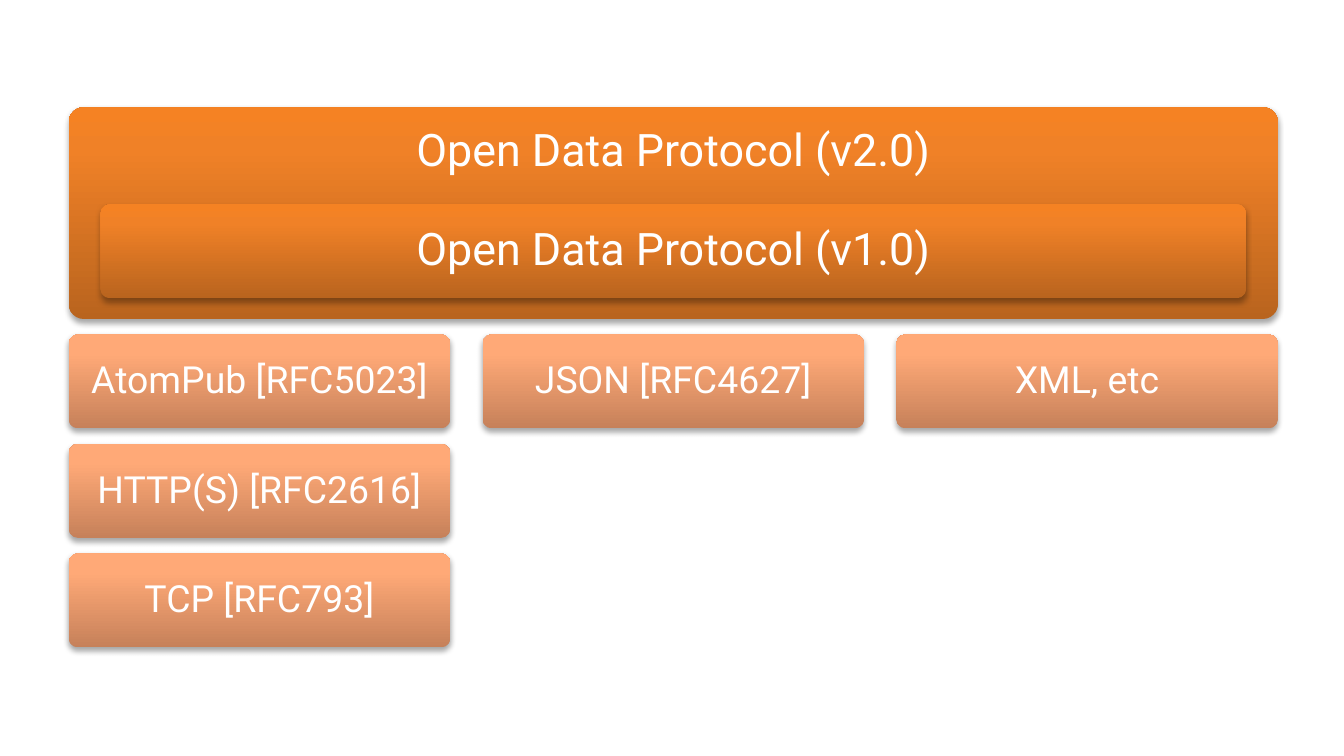
from pptx import Presentation
from pptx.dml.color import RGBColor
from pptx.enum.shapes import MSO_SHAPE
from pptx.enum.text import MSO_ANCHOR, PP_ALIGN
from pptx.oxml import parse_xml
from pptx.oxml.ns import nsdecls, qn
from pptx.util import Cm, Pt

COLORS = {
    "text": "FFFFFF",
    "shadow": "000000",
    "orange": ("B9641E", "F08127", "F58223"),
    "peach": ("C6815A", "FFA977", "FFAA79"),
}
STOPS = (0, 80, 100)
FONT = "Roboto"
BLOCK_HEIGHT = 1.78
COLUMN_GAP = 0.61
ROW_GAP = 0.29


def style_block(shape, palette):
    """Fill with a bottom-to-top gradient and add a soft shadow below."""
    shape.fill.gradient()
    shape.fill.gradient_angle = 90
    shape.line.fill.background()
    shape.shadow.inherit = False
    properties = shape._element.spPr
    stops = "".join(
        f'<a:gs pos="{stop * 1000}"><a:srgbClr val="{color}"/></a:gs>'
        for stop, color in zip(STOPS, COLORS[palette])
    )
    old_stops = properties.find(qn("a:gradFill")).find(qn("a:gsLst"))
    old_stops.getparent().replace(
        old_stops, parse_xml(f'<a:gsLst {nsdecls("a")}>{stops}</a:gsLst>'))
    properties.find(qn("a:effectLst")).append(parse_xml(
        f'<a:outerShdw {nsdecls("a")} blurRad="{Pt(3.1)}" dist="{Pt(1.8)}" '
        f'dir="5400000" rotWithShape="0"><a:srgbClr val="{COLORS["shadow"]}">'
        '<a:alpha val="35000"/></a:srgbClr></a:outerShdw>'))


def add_block(slide, box, text, palette, size, inset,
              anchor=MSO_ANCHOR.MIDDLE, rounding=0.1):
    shape = slide.shapes.add_shape(
        MSO_SHAPE.ROUNDED_RECTANGLE, *(Cm(length) for length in box))
    shape.adjustments[0] = rounding
    style_block(shape, palette)

    frame = shape.text_frame
    frame.word_wrap = True
    frame.vertical_anchor = anchor
    frame.margin_left = frame.margin_right = Cm(inset)
    frame.margin_top = frame.margin_bottom = Cm(inset)
    paragraph = frame.paragraphs[0]
    paragraph.alignment = PP_ALIGN.CENTER
    paragraph.line_spacing = 0.9
    run = paragraph.add_run()
    run.text = text
    run.font.name = FONT
    run.font.size = Pt(size)
    run.font.color.rgb = RGBColor.from_string(COLORS["text"])


def add_protocol_versions(slide, box):
    """Outer version block with the earlier version nested inside."""
    left, top, width, height = box
    add_block(slide, box, "Open Data Protocol (v2.0)", "orange", 24, 0.3,
              anchor=MSO_ANCHOR.TOP, rounding=0.07)
    side = 0.6
    nested = (left + side, top + 1.83, width - 2 * side, BLOCK_HEIGHT)
    add_block(slide, nested, "Open Data Protocol (v1.0)", "orange", 24, 0.35)


def add_foundations(slide, box, columns):
    """Columns of underlying standards, stacked from the top down."""
    left, top, width, _ = box
    block_width = (width - COLUMN_GAP * (len(columns) - 1)) / len(columns)
    for column, labels in enumerate(columns):
        for row, label in enumerate(labels):
            block = (left + column * (block_width + COLUMN_GAP),
                     top + row * (BLOCK_HEIGHT + ROW_GAP),
                     block_width, BLOCK_HEIGHT)
            add_block(slide, block, label, "peach", 20, 0.27)


def main():
    presentation = Presentation()
    presentation.slide_width = Cm(25.4)
    presentation.slide_height = Cm(14.29)
    slide = presentation.slides.add_slide(presentation.slide_layouts[6])

    # Protocol versions on top
    left, top, width, height = 1.3, 2.03, 22.85, 4
    add_protocol_versions(slide, (left, top, width, height))

    # Standards they build on
    add_foundations(slide, (left, top + height + ROW_GAP, width, 5.92), [
        ["AtomPub [RFC5023]", "HTTP(S) [RFC2616]", "TCP [RFC793]"],
        ["JSON [RFC4627]"],
        ["XML, etc"],
    ])
    presentation.save("out.pptx")


if __name__ == "__main__":
    main()
